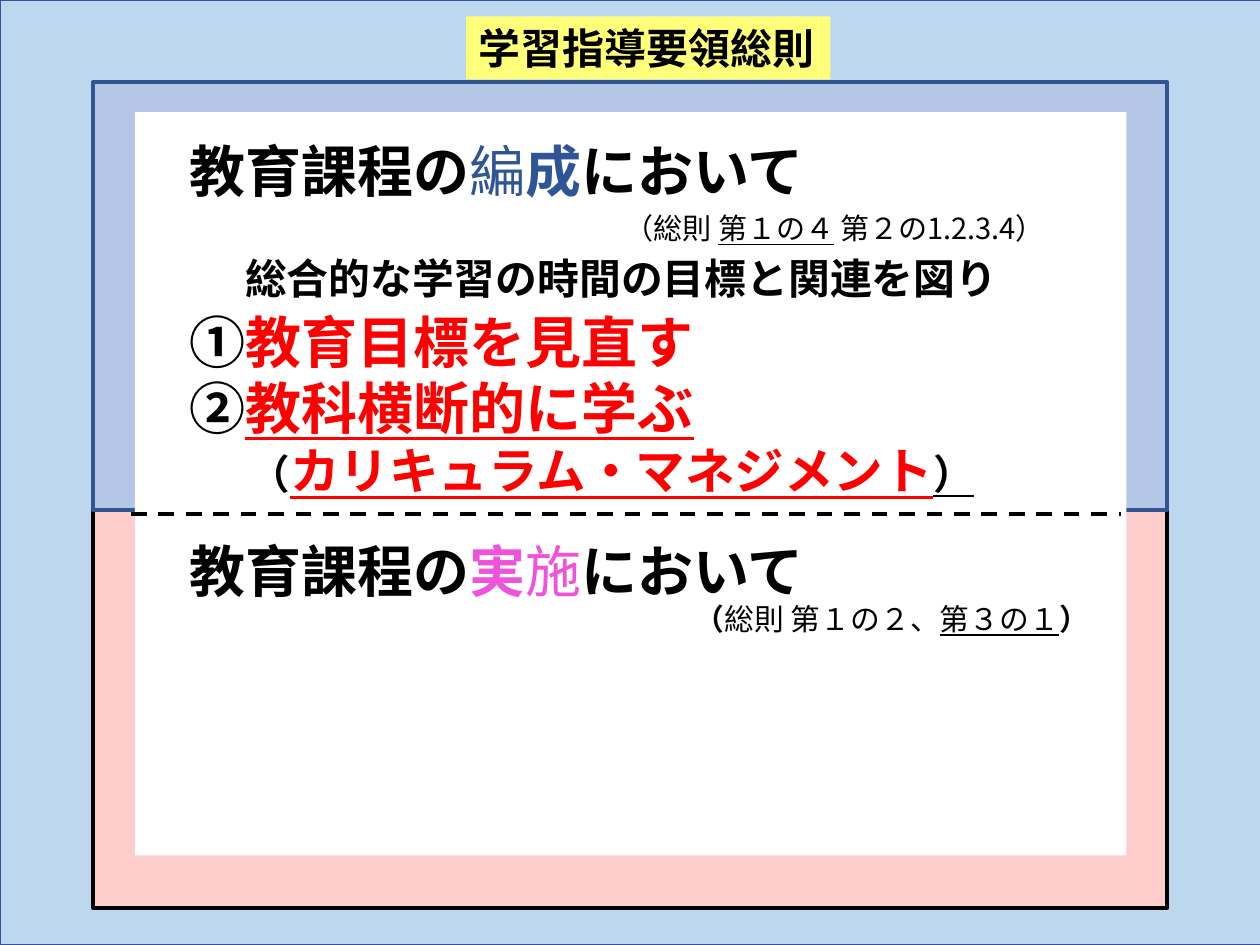
import pptx
import pptx.util
import pptx.dml.color
import pptx.enum.dml
import pptx.enum.shapes
import pptx.enum.text
import lxml.etree

COLORS = {
    "sky": "BDD7EE", "pink": "FFCCCC", "periwinkle": "B4C7E7", "white": "FFFFFF",
    "yellow": "FFFF79", "navy": "325491", "black": "000000", "blue": "2F5597",
    "red": "FF0000", "magenta": "EF53DC",
}
JAPANESE = "Noto Sans CJK JP"

deck = pptx.Presentation()
deck.slide_width = pptx.util.Inches(10)
deck.slide_height = pptx.util.Inches(7.5)
column = deck.slide_width / 100
row = deck.slide_height / 75
page = deck.slides.add_slide(deck.slide_layouts[1])
title, body = page.placeholders


def place(box, left, top, width, height, anchor):
    box.left, box.width = int(left * column), int(width * column)
    box.top, box.height = int(top * row), int(height * row)
    frame = box.text_frame
    frame.word_wrap = True
    frame.auto_size = pptx.enum.text.MSO_AUTO_SIZE.NONE
    frame.vertical_anchor = anchor
    box._element.getparent().append(box._element)
    return frame


def write(para, indent, before, line, runs, latin=JAPANESE):
    properties = para._p.get_or_add_pPr()
    properties.set("marL", str(int(pptx.util.Pt(indent))))
    properties.set("indent", "0")
    lxml.etree.SubElement(properties, pptx.oxml.ns.qn("a:buNone"))
    para.alignment = pptx.enum.text.PP_ALIGN.LEFT
    para.space_before = pptx.util.Pt(before)
    para.space_after = pptx.util.Pt(0)
    if line:
        para.line_spacing = pptx.util.Pt(line)
    for text, size, color, bold, underline in runs:
        span = para.add_run()
        span.text = text
        span.font.name = latin
        span.font.size = pptx.util.Pt(size)
        span.font.bold = bold
        span.font.underline = underline
        span.font.color.rgb = pptx.dml.color.RGBColor.from_string(COLORS[color])
        east_asian = lxml.etree.SubElement(span.font._element, pptx.oxml.ns.qn("a:ea"))
        east_asian.set("typeface", JAPANESE)


panels = [
    (0, 0, 100.2, 75, "sky", "navy", 1),
    (7.4, 40.4, 85.2, 31.7, "pink", "black", 2.25),
    (7.4, 6.5, 85.2, 34, "periwinkle", "navy", 2.25),
    (10.7, 8.9, 78.7, 59, "white", None, 0),
]
for left, top, width, height, fill, outline, weight in panels:
    panel = page.shapes.add_shape(
        pptx.enum.shapes.MSO_SHAPE.RECTANGLE,
        int(left * column), int(top * row), int(width * column), int(height * row))
    panel.shadow.inherit = False
    panel.fill.solid()
    panel.fill.fore_color.rgb = pptx.dml.color.RGBColor.from_string(COLORS[fill])
    if outline:
        panel.line.color.rgb = pptx.dml.color.RGBColor.from_string(COLORS[outline])
        panel.line.width = pptx.util.Pt(weight)
    else:
        panel.line.fill.background()

body_lines = [
    (0, 0, 41, [("教育課程の", 32, "black", True, False), ("編", 32, "blue", False, False),
                ("成", 32, "blue", True, False), ("において", 32, "black", True, False)]),
    (32, 28, 28.5, [("総合的な学習の時間の目標と関連を図り", 23.9, "black", True, False)]),
    (0, 0, 41, [("①", 32, "black", True, False), ("教育目標を見直す", 32, "red", True, False)]),
    (0, 0, 38, [("②", 32, "black", True, False), ("教科横断的に学ぶ", 32, "red", True, True)]),
    (34.8, 0, 33.5, [("（", 23.2, "black", True, False),
                     ("カリキュラム・マネジメント", 28.3, "red", True, True),
                     ("）", 23.2, "black", True, True)]),
    (0, 21.5, 38, [("教育課程の", 32, "black", True, False), ("実", 32, "magenta", True, False),
                   ("施", 32, "magenta", False, False), ("において", 32, "black", True, False)]),
    (289, 0, 18.5, [("（", 17, "black", True, False), ("総則 第１の２、", 17, "black", False, False),
                    ("第３の１", 17, "black", False, True), ("）", 17, "black", True, False)]),
]
frame = place(body, 14, 10, 75.1, 43.1, pptx.enum.text.MSO_ANCHOR.TOP)
for number, (indent, before, line, runs) in enumerate(body_lines):
    para = frame.add_paragraph() if number else frame.paragraphs[0]
    write(para, indent, before, line, runs)

divider = page.shapes.add_connector(
    pptx.enum.shapes.MSO_CONNECTOR.STRAIGHT,
    int(10.4 * column), int(40.8 * row), int(89 * column), int(40.8 * row))
divider.line.color.rgb = pptx.dml.color.RGBColor.from_string(COLORS["black"])
divider.line.width = pptx.util.Pt(2.25)
divider.line.dash_style = pptx.enum.dml.MSO_LINE.DASH
lxml.etree.SubElement(divider._element.spPr, pptx.oxml.ns.qn("a:effectLst"))

frame = place(title, 37, 1.3, 28.9, 5, pptx.enum.text.MSO_ANCHOR.MIDDLE)
title.fill.solid()
title.fill.fore_color.rgb = pptx.dml.color.RGBColor.from_string(COLORS["yellow"])
write(frame.paragraphs[0], 0, 0, None,
      [("学習指導要領総則", 24, "black", True, False)], "Calibri")

reference = page.shapes.add_textbox(0, 0, 0, 0)
frame = place(reference, 48.6, 16.1, 46.2, 6.6, pptx.enum.text.MSO_ANCHOR.TOP)
write(frame.paragraphs[0], 0, 0, 21,
      [("（総則 ", 16.6, "black", False, False), ("第１の４", 16.6, "black", False, True),
       (" 第２の1.2.3.4）", 16.6, "black", False, False)])

deck.save("out.pptx")
